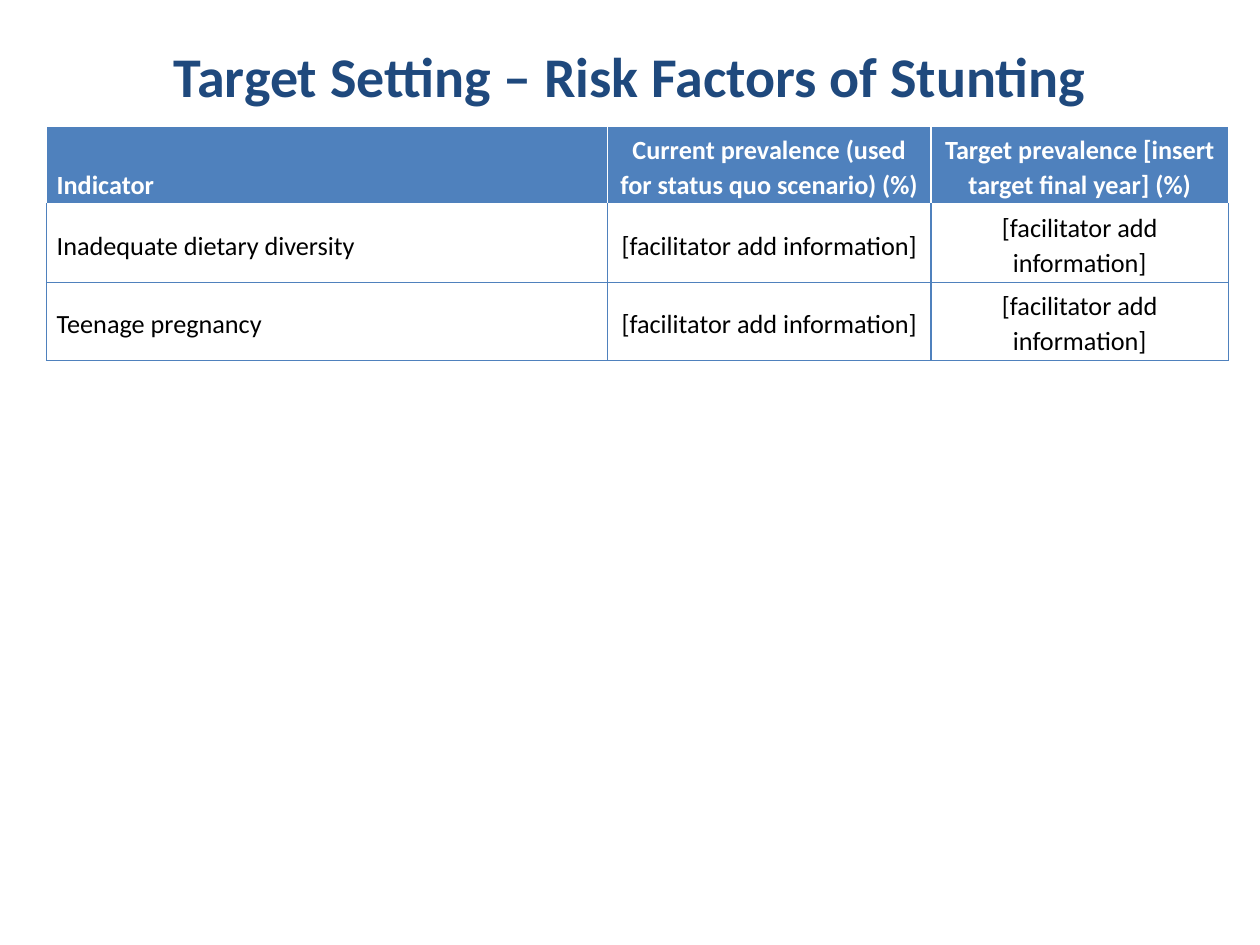
from lxml import etree
from pptx import Presentation, util as u
from pptx.dml.color import RGBColor
from pptx.enum import text
from pptx.oxml import ns

TITLE = "Target Setting – Risk Factors of Stunting"
HEADER = [
    "Indicator",
    "Current prevalence (used for status quo scenario) (%)",
    "Target prevalence [insert target final year] (%)",
]
INDICATORS = ["Inadequate dietary diversity", "Teenage pregnancy"]
PENDING = "[facilitator add information]"
ROWS = [HEADER] + [[name, PENDING, PENDING] for name in INDICATORS]

COLORS = {"navy": "1F497D", "blue": "4F81BD", "white": "FFFFFF", "black": "000000"}
COL_WIDTHS = [4.45, 2.57, 2.36]
ROW_HEIGHT = 0.61
TABLE_LEFT, TABLE_TOP = 0.37, 1
MARGINS = {"margin_left": 0.08, "margin_top": 0.04,
           "margin_right": 0.08, "margin_bottom": 0.02}
ANCHOR, ALIGN = text.MSO_ANCHOR, text.PP_ALIGN


def rgb(name):
    return RGBColor.from_string(COLORS[name])


def write(p, words, size, color, bold, align):
    p.alignment = align
    r = p.add_run()
    r.text = words
    formats = {"name": "Calibri", "size": u.Pt(size), "bold": bold}
    for key, value in formats.items():
        setattr(r.font, key, value)
    r.font.color.rgb = rgb(color)


def add_border(cell, side, color):
    props = cell._tc.get_or_add_tcPr()
    line = etree.SubElement(props, ns.qn(f"a:ln{side}"), w=str(u.Pt(1)))
    fill = etree.SubElement(line, ns.qn("a:solidFill"))
    etree.SubElement(fill, ns.qn("a:srgbClr"), val=COLORS[color])


def format_cell(cell, words, row, col):
    head = row == 0
    for side in "LRTB":
        white = head or (row == 1 and side == "T")
        add_border(cell, side, "white" if white else "blue")
    cell.fill.solid()
    cell.fill.fore_color.rgb = rgb("blue" if head else "white")
    for key, value in MARGINS.items():
        setattr(cell, key, u.Inches(value))
    if head:
        cell.vertical_anchor = ANCHOR.TOP if col else ANCHOR.BOTTOM
    else:
        cell.vertical_anchor = ANCHOR.MIDDLE
    p = cell.text_frame.paragraphs[0]
    p.line_spacing = 1.1
    write(p, words, 15, "white" if head else "black", head,
          ALIGN.CENTER if col else ALIGN.LEFT)


def main():
    prs = Presentation()
    prs.slide_width, prs.slide_height = u.Inches(10), u.Inches(7.5)
    s = prs.slides.add_slide(prs.slide_layouts[5])

    title = s.shapes.title
    box = {"left": 0.75, "top": -0.01, "width": 8.5, "height": 1.21}
    for key, value in box.items():
        setattr(title, key, u.Inches(value))
    tf = title.text_frame
    tf.vertical_anchor = ANCHOR.MIDDLE
    write(tf.paragraphs[0], TITLE, 32, "navy", True, ALIGN.CENTER)

    size = (sum(COL_WIDTHS), ROW_HEIGHT * len(ROWS))
    frame = [u.Inches(v) for v in (TABLE_LEFT, TABLE_TOP, *size)]
    table = s.shapes.add_table(len(ROWS), len(COL_WIDTHS), *frame).table
    for column, width in zip(table.columns, COL_WIDTHS):
        column.width = u.Inches(width)
    for row, values in enumerate(ROWS):
        for col, words in enumerate(values):
            format_cell(table.cell(row, col), words, row, col)

    prs.save("out.pptx")


if __name__ == "__main__":
    main()
